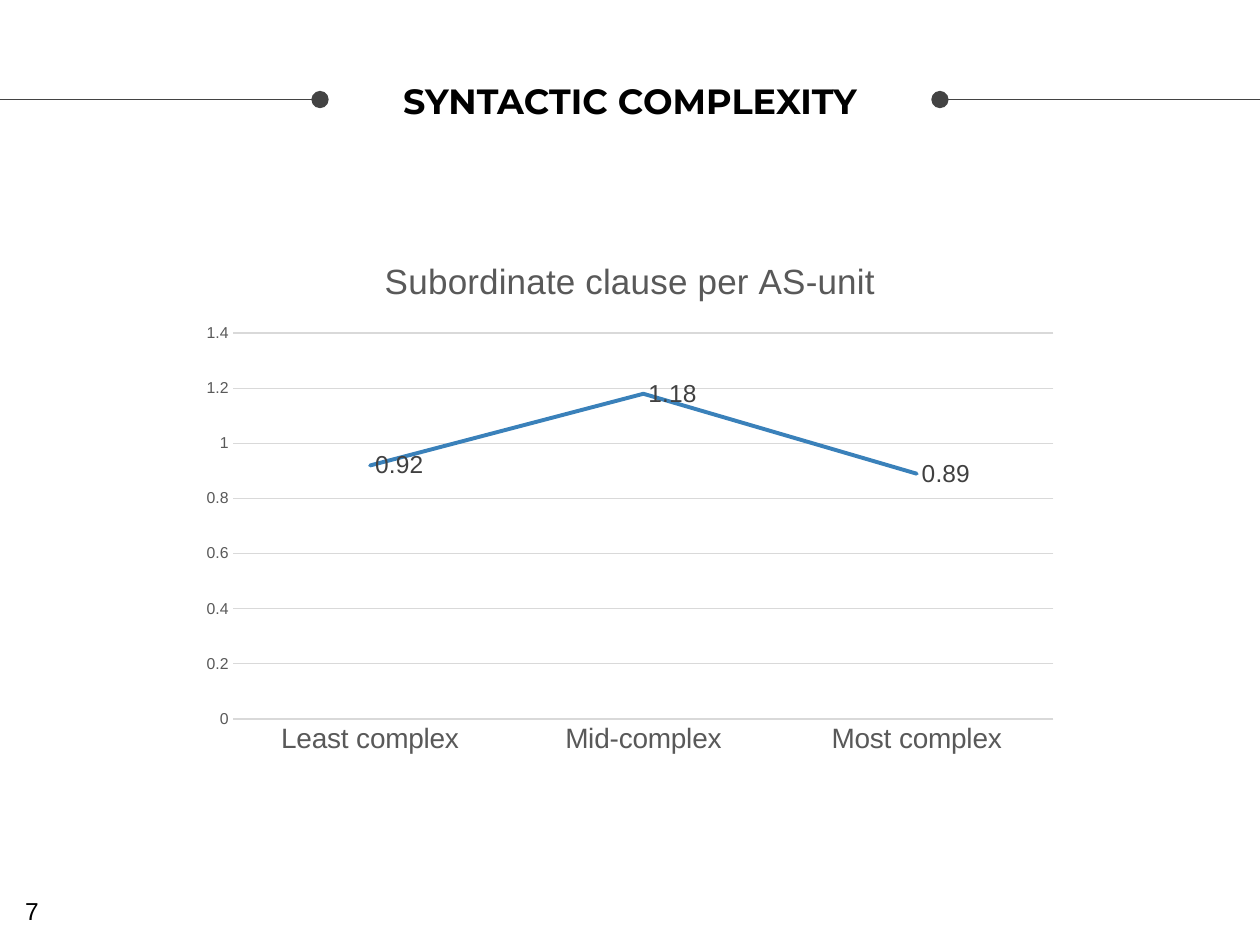
from lxml import etree
from pptx import Presentation
from pptx.chart.data import CategoryChartData
from pptx.dml.color import RGBColor
from pptx.enum.chart import XL_CHART_TYPE, XL_LABEL_POSITION, XL_TICK_MARK
from pptx.enum.shapes import MSO_CONNECTOR
from pptx.enum.text import MSO_ANCHOR, MSO_AUTO_SIZE, PP_ALIGN
from pptx.oxml.ns import qn
from pptx.util import Inches, Pt

LINE_CHART = XL_CHART_TYPE.LINE
LABEL_RIGHT = XL_LABEL_POSITION.RIGHT
NO_TICK = XL_TICK_MARK.NONE
STRAIGHT = MSO_CONNECTOR.STRAIGHT
MIDDLE = MSO_ANCHOR.MIDDLE
FIT_SHAPE = MSO_AUTO_SIZE.SHAPE_TO_FIT_TEXT
CENTER = PP_ALIGN.CENTER

WIDTH, HEIGHT = Inches(10), Inches(7.5)
CHART_TITLE = "Subordinate clause per AS-unit"
VALUES = {"Least complex": 0.92, "Mid-complex": 1.18, "Most complex": 0.89}


def rgb(color):
    """Turn a hex string into a colour."""
    return RGBColor.from_string(color)


def format_font(font, size, color, name="Arial", bold=False):
    """Set the face, size, colour and weight of a font."""
    font.name, font.size, font.bold = name, Pt(size), bold
    font.color.rgb = rgb(color)


def format_line(line, color, width):
    """Set the colour and width of a line."""
    line.color.rgb = rgb(color)
    line.width = Pt(width)


def add_title(slide, text):
    """Fill and place the title placeholder."""
    sp = slide.shapes.title
    sp.left, sp.top = Inches(2.87), Inches(0.17)
    sp.width, sp.height = Inches(4.26), Inches(1.25)
    tf = sp.text_frame
    tf.text = text
    tf.vertical_anchor = MIDDLE
    tf.margin_left = tf.margin_right = Inches(0.1)
    tf.margin_top = tf.margin_bottom = Inches(0.1)
    p = tf.paragraphs[0]
    p.alignment = CENTER
    format_font(p.runs[0].font, 20, "000000", "Montserrat", True)


def add_rule(slide, start, end):
    """Draw a heading rule with a dot at its start, between shares of the width."""
    y = Inches(0.79)
    rule = slide.shapes.add_connector(
        STRAIGHT, int(WIDTH * start), y, int(WIDTH * end), y)
    format_line(rule.line, "434343", 0.75)
    ln = rule.line._get_or_add_ln()
    etree.SubElement(ln, qn("a:headEnd"), type="oval", w="lg", len="lg")
    etree.SubElement(rule._element.spPr, qn("a:effectLst"))


def format_axes(chart):
    """Style the category axis, value axis and gridlines."""
    cat, val = chart.category_axis, chart.value_axis
    for axis, size in ((cat, 16), (val, 9)):
        axis.major_tick_mark = axis.minor_tick_mark = NO_TICK
        format_font(axis.tick_labels.font, size, "595959")
    format_line(cat.format.line, "D9D9D9", 0.75)
    val.format.line.fill.background()
    val.minimum_scale, val.maximum_scale, val.major_unit = 0, 1.4, 0.2
    format_line(val.major_gridlines.format.line, "D9D9D9", 0.75)


def format_series(series):
    """Style the data line and its value labels."""
    series.smooth = False
    format_line(series.format.line, "3A81BA", 2.25)
    series.format.line._get_or_add_ln().set("cap", "rnd")
    labels = series.data_labels
    labels.show_value = True
    labels.position = LABEL_RIGHT
    format_font(labels.font, 14, "404040")


def add_line_chart(slide, title, values):
    """Add the titled line chart."""
    data = CategoryChartData()
    data.categories = list(values)
    data.add_series(title, list(values.values()))
    chart = slide.shapes.add_chart(
        LINE_CHART, Inches(1.5), Inches(1.87), Inches(7), Inches(4.2), data).chart
    format_font(chart.font, 10, "000000")
    chart.has_legend = False
    chart.has_title = True
    tf = chart.chart_title.text_frame
    tf.text = title
    format_font(tf.paragraphs[0].runs[0].font, 20, "595959")
    chart.chart_title.include_in_layout = False
    chart.plots[0].vary_by_categories = False
    format_axes(chart)
    format_series(chart.plots[0].series[0])


def add_page_number(slide, number):
    """Put the page number in the lower left corner."""
    sp = slide.shapes.add_textbox(
        Inches(0.1), Inches(7.06), Inches(0.31), Inches(0.34))
    tf = sp.text_frame
    tf.text = number
    tf.word_wrap = False
    tf.auto_size = FIT_SHAPE
    format_font(tf.paragraphs[0].runs[0].font, 14, "000000")


def main():
    """Build the slide and save it."""
    prs = Presentation()
    prs.slide_width, prs.slide_height = WIDTH, HEIGHT
    slide = prs.slides.add_slide(prs.slide_layouts[5])
    add_rule(slide, 0.254, 0)
    add_rule(slide, 0.746, 1)
    add_title(slide, "SYNTACTIC COMPLEXITY")
    add_line_chart(slide, CHART_TITLE, VALUES)
    add_page_number(slide, "7")
    prs.save("out.pptx")


if __name__ == "__main__":
    main()
